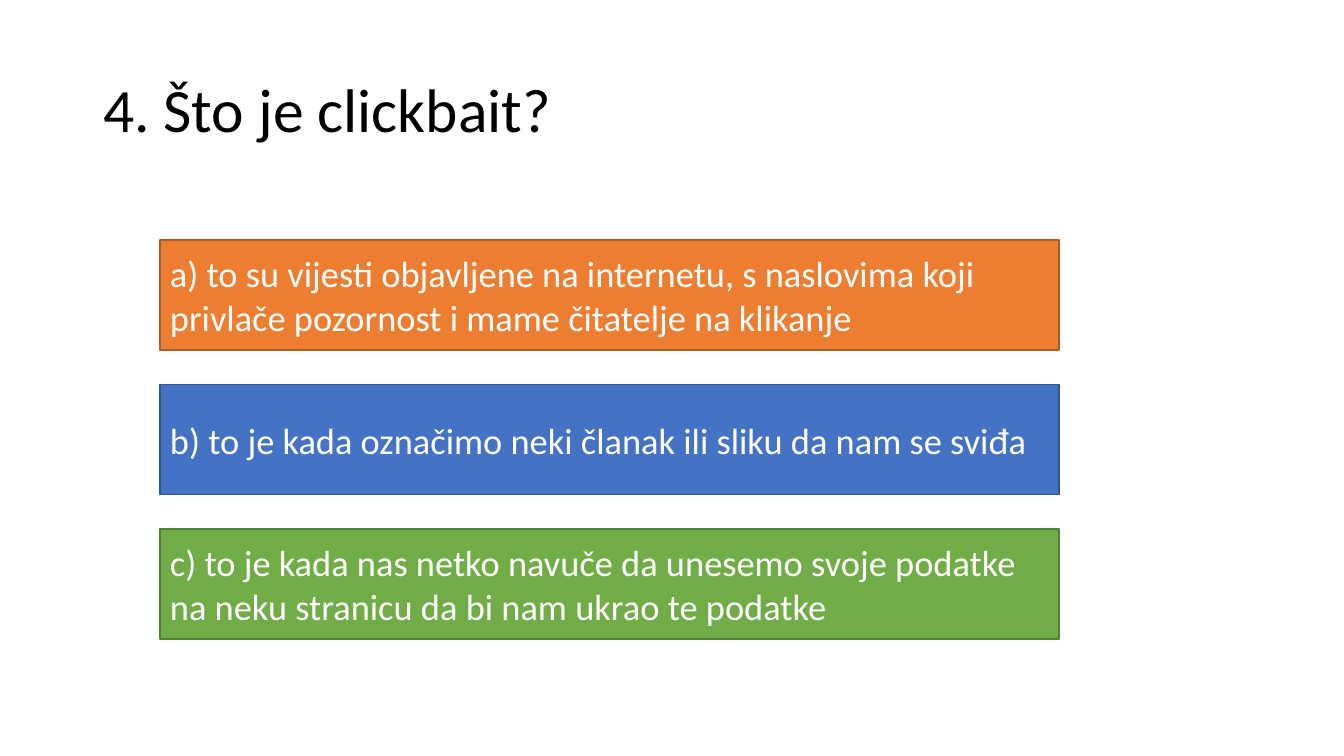
from pptx import Presentation
from pptx import util as u
from pptx.dml.color import RGBColor
from pptx.enum import shapes, text

EMU_PER_PX = 914400 / 100.8
FONT = "Calibri"
BLACK = RGBColor(0x00, 0x00, 0x00)
WHITE = RGBColor(0xFF, 0xFF, 0xFF)
ORANGE, DARK_ORANGE = RGBColor(0xED, 0x7D, 0x31), RGBColor(0xAF, 0x5C, 0x24)
BLUE, DARK_BLUE = RGBColor(0x44, 0x72, 0xC4), RGBColor(0x32, 0x54, 0x91)
GREEN, DARK_GREEN = RGBColor(0x70, 0xAD, 0x47), RGBColor(0x53, 0x80, 0x35)

ANSWER_HEIGHT = 110
ANSWERS = [
    ("a) to su vijesti objavljene na internetu, s naslovima koji privlače "
     "pozornost i mame čitatelje na klikanje", ORANGE, DARK_ORANGE),
    ("b) to je kada označimo neki članak ili sliku da nam se sviđa",
     BLUE, DARK_BLUE),
    ("c) to je kada nas netko navuče da unesemo svoje podatke na neku "
     "stranicu da bi nam ukrao te podatke", GREEN, DARK_GREEN),
]


def px(length):
    return u.Emu(round(length * EMU_PER_PX))


def write(shape, words, size, color):
    """Fill the shape with one left-aligned, vertically centred paragraph."""
    frame = shape.text_frame
    frame.word_wrap = True
    frame.auto_size = text.MSO_AUTO_SIZE.NONE
    frame.vertical_anchor = text.MSO_ANCHOR.MIDDLE
    paragraph = frame.paragraphs[0]
    paragraph.alignment = text.PP_ALIGN.LEFT
    run = paragraph.add_run()
    run.text = words
    run.font.name = FONT
    run.font.size = u.Pt(size)
    run.font.color.rgb = color
    return paragraph


def place_title(slide, words, left, top, width, height):
    title = slide.shapes.title
    title.left, title.top = px(left), px(top)
    title.width, title.height = px(width), px(height)
    write(title, words, 44, BLACK).line_spacing = 0.9


def add_answers(slide, answers, left, top, width, height):
    """Spread the answer bars evenly from the top to the bottom of the box."""
    pitch = (height - ANSWER_HEIGHT) / (len(answers) - 1)
    for index, (words, fill, outline) in enumerate(answers):
        bar = slide.shapes.add_shape(
            shapes.MSO_SHAPE.RECTANGLE,
            px(left), px(top + index * pitch), px(width), px(ANSWER_HEIGHT))
        bar.shadow.inherit = False
        bar.fill.solid()
        bar.fill.fore_color.rgb = fill
        bar.line.color.rgb = outline
        bar.line.width = u.Pt(1)
        write(bar, words, 26, WHITE)


def main():
    presentation = Presentation()
    presentation.slide_width, presentation.slide_height = px(1344), px(756)
    title_only = presentation.slide_layouts.get_by_name("Title Only")
    slide = presentation.slides.add_slide(title_only)
    place_title(slide, "4. Što je clickbait?", 93, 40, 1159, 146)
    add_answers(slide, ANSWERS, 160, 240, 899, 399)
    presentation.save("out.pptx")


if __name__ == "__main__":
    main()
